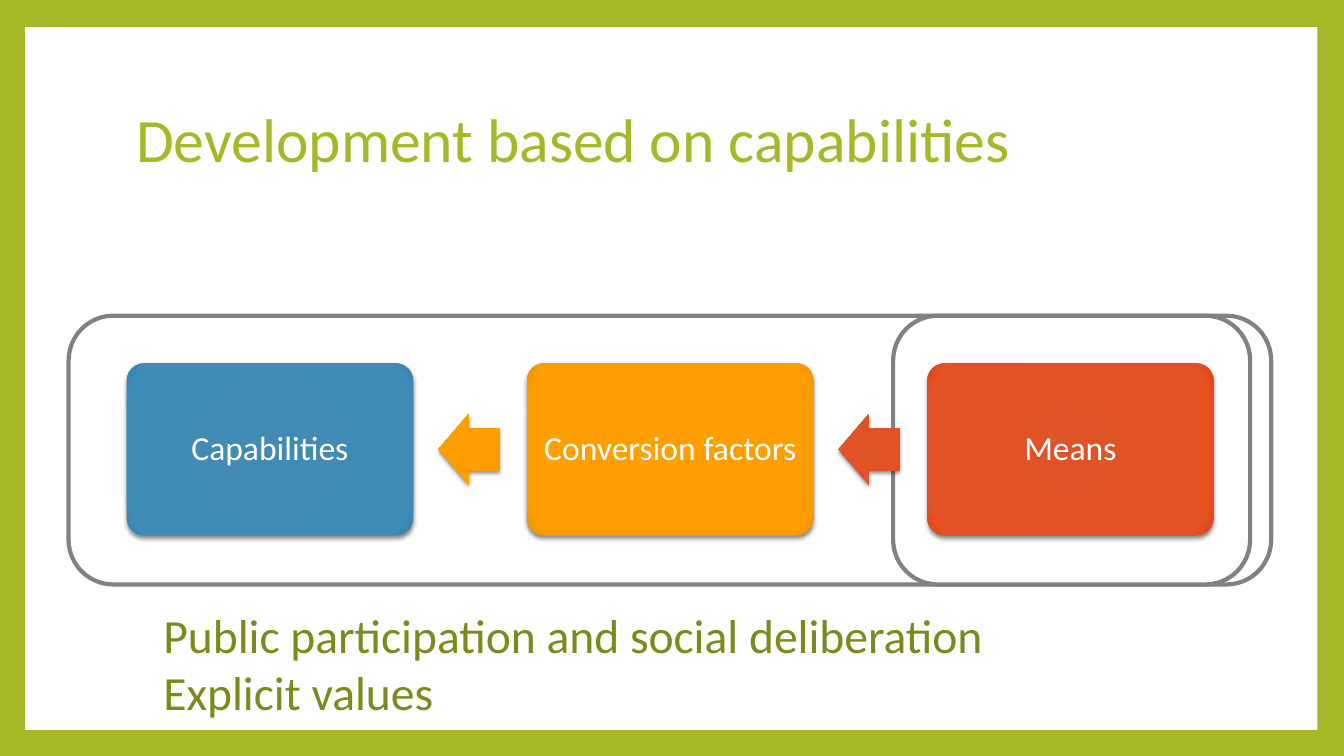
import pptx
import pptx.util
import pptx.oxml
import pptx.oxml.ns
import pptx.dml.color
import pptx.enum.shapes
import pptx.enum.text

Pt = pptx.util.Pt
Shape = pptx.enum.shapes.MSO_SHAPE
Anchor = pptx.enum.text.MSO_ANCHOR
Align = pptx.enum.text.PP_ALIGN
NAMESPACE = pptx.oxml.ns.nsdecls("a")


def paint(target, color):
    if hasattr(target, "solid"):
        target.solid()
        target = target.fore_color
    target.rgb = pptx.dml.color.RGBColor.from_string(color)


def write(para, text, size, color):
    span = para.add_run()
    span.text = text
    span.font.name = "Calibri"
    span.font.size = Pt(size)
    paint(span.font.color, color)


deck = pptx.Presentation()
deck.slide_width = Pt(960)
deck.slide_height = Pt(540)
page = deck.slides.add_slide(deck.slide_layouts[5])
paint(page.background.fill, "A6B727")

panel = page.shapes.add_shape(Shape.RECTANGLE, Pt(18), Pt(19.4), Pt(923), Pt(502))
panel.shadow.inherit = False
paint(panel.fill, "FFFFFF")
panel.line.fill.background()

title = page.shapes.title
panel._element.addnext(title._element)
title.left, title.top, title.width, title.height = Pt(90), Pt(48.2), Pt(777.6), Pt(106.6)
title.text_frame.vertical_anchor = Anchor.MIDDLE
title.text_frame.word_wrap = True
para = title.text_frame.paragraphs[0]
para.alignment = Align.LEFT
para.line_spacing = 0.9
write(para, "Development based on capabilities", 44, "A6B727")

for left, width in ((49, 859), (638, 255)):
    outline = page.shapes.add_shape(Shape.ROUNDED_RECTANGLE, Pt(left), Pt(225.5), Pt(width), Pt(192))
    outline.shadow.inherit = False
    paint(outline.fill, "FFFFFF")
    paint(outline.line.fill, "818183")
    outline.line.width = Pt(3)

steps = (
    ("Means", ("DF5327", "E45122", "DB4313")),
    ("Conversion factors", ("FE9E00", "FE9E00", "E78F00")),
    ("Capabilities", ("418AB3", "3E8BB6", "3180AD")),
)
for index, (label, colors) in enumerate(steps):
    left = 662.4 - 285.9 * index
    box = page.shapes.add_shape(Shape.ROUNDED_RECTANGLE, Pt(left), Pt(259.6), Pt(204.5), Pt(122.7))
    box.adjustments[0] = 0.1
    frame = box.text_frame
    frame.word_wrap = True
    frame.vertical_anchor = Anchor.MIDDLE
    para = frame.paragraphs[0]
    para.alignment = Align.CENTER
    para.line_spacing = 0.9
    write(para, label, 24, "FFFFFF")
    pieces = [box]

    if index < len(steps) - 1:
        arrow = page.shapes.add_shape(Shape.RIGHT_ARROW, Pt(left - 63.4), Pt(295.6), Pt(43.4), Pt(50.7))
        arrow.rotation = 180
        arrow.adjustments[0] = 0.6
        pieces.append(arrow)

    stops = "".join(
        f'<a:gs pos="{position}000"><a:srgbClr val="{color}"/></a:gs>'
        for position, color in zip((0, 90, 100), colors)
    )
    for piece in pieces:
        piece.fill.background()
        piece.line.fill.background()
        piece.shadow.inherit = False
        properties = piece._element.spPr
        gradient = pptx.oxml.parse_xml(
            f'<a:gradFill {NAMESPACE} rotWithShape="1"><a:gsLst>{stops}</a:gsLst><a:path path="circle">'
            '<a:fillToRect l="100000" t="100000" r="100000" b="100000"/></a:path></a:gradFill>'
        )
        properties.replace(properties.find(pptx.oxml.ns.qn("a:noFill")), gradient)
        shadow = pptx.oxml.parse_xml(
            f'<a:outerShdw {NAMESPACE} blurRad="{Pt(3)}" dist="{Pt(2)}" dir="5400000" rotWithShape="0">'
            '<a:srgbClr val="000000"><a:alpha val="45000"/></a:srgbClr></a:outerShdw>'
        )
        properties.find(pptx.oxml.ns.qn("a:effectLst")).append(shadow)

notes = page.shapes.add_textbox(Pt(109.6), Pt(429), Pt(758), Pt(90))
frame = notes.text_frame
frame.word_wrap = True
frame.auto_size = pptx.enum.text.MSO_AUTO_SIZE.SHAPE_TO_FIT_TEXT
for index, text in enumerate(("Public participation and social deliberation", "Explicit values")):
    para = frame.add_paragraph() if index else frame.paragraphs[0]
    write(para, text, 34, "7D891D")

deck.save("out.pptx")
